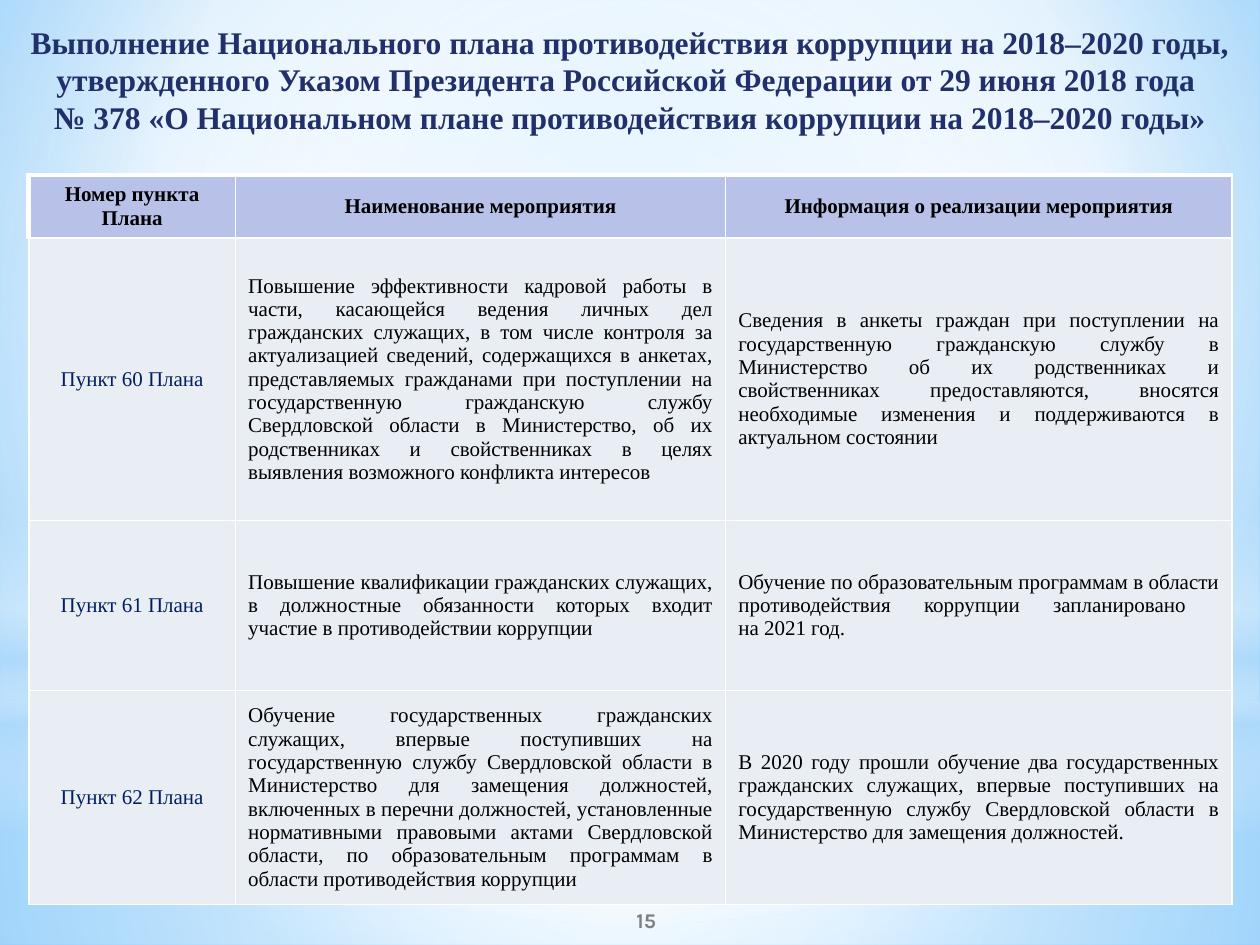
from dataclasses import dataclass

from lxml.etree import SubElement
from pptx import Presentation
from pptx.dml.color import RGBColor
from pptx.enum.shapes import MSO_SHAPE as Shape
from pptx.enum.text import MSO_ANCHOR as Anchor, PP_ALIGN as Align
from pptx.oxml.ns import qn
from pptx.util import Cm, Pt


@dataclass(frozen=True)
class Theme:
    serif: str = "Times New Roman"
    sans: str = "Karla"
    title: str = "21306A"
    body: str = "000000"
    clause: str = "002060"
    number: str = "808080"
    white: str = "FFFFFF"
    haze: str = "B4DCFA"
    sky: str = "9ED5FF"
    deep_sky: str = "5BB9FF"
    header_fill: str = "B8C2E9"
    row_fill: str = "E9EDF4"
    title_size: int = 18
    body_size: int = 12
    border: int = 1
    thick_border: int = 3


THEME = Theme()
WIDTH, HEIGHT = 25.4, 19.05
CENTER = (50, 50, 50, 50)

TITLE = (
    "Выполнение Национального плана противодействия коррупции на 2018–2020 годы, "
    "утвержденного Указом Президента Российской Федерации от 29 июня 2018 года \n"
    "№ 378 «О Национальном плане противодействия коррупции на 2018–2020 годы»"
)
HEADERS = ["Номер пункта Плана", "Наименование мероприятия",
           "Информация о реализации мероприятия"]
MEASURES = [
    ["Пункт 60 Плана",
     "Повышение эффективности кадровой работы в части, касающейся ведения личных дел "
     "гражданских служащих, в том числе контроля за актуализацией сведений, содержащихся "
     "в анкетах, представляемых гражданами при поступлении на государственную гражданскую "
     "службу Свердловской области в Министерство, об их родственниках и свойственниках "
     "в целях выявления возможного конфликта интересов",
     "Сведения в анкеты граждан при поступлении на государственную гражданскую службу "
     "в Министерство об их родственниках и свойственниках предоставляются, вносятся "
     "необходимые изменения и поддерживаются в актуальном состоянии"],
    ["Пункт 61 Плана",
     "Повышение квалификации гражданских служащих, в должностные обязанности которых "
     "входит участие в противодействии коррупции",
     "Обучение по образовательным программам в области противодействия коррупции "
     "запланировано \nна 2021 год."],
    ["Пункт 62 Плана",
     "Обучение государственных гражданских служащих, впервые поступивших "
     "на государственную службу Свердловской области в Министерство для замещения "
     "должностей, включенных в перечни должностей, установленные нормативными правовыми "
     "актами Свердловской области, по образовательным программам в области "
     "противодействия коррупции",
     "В 2020 году прошли обучение два государственных гражданских служащих, впервые "
     "поступивших на государственную службу Свердловской области в Министерство "
     "для замещения должностей."],
]
COLUMN_WIDTHS = [4.17, 9.88, 10.21]
ROW_HEIGHTS = [1.27, 5.69, 3.43, 4.31]


def write(frame, text, *, font=THEME.serif, size=THEME.body_size, color=THEME.body,
          bold=False, align=Align.CENTER):
    frame.word_wrap = True
    paragraph = frame.paragraphs[0]
    paragraph.alignment = align
    for index, line in enumerate(text.split("\n")):
        if index:
            paragraph.add_line_break()
        run = paragraph.add_run()
        run.text = line
        run.font.name, run.font.size, run.font.bold = font, Pt(size), bold
        run.font.color.rgb = RGBColor.from_string(color)
    # A line break carries its own type size
    for line_break in paragraph._p.findall(qn("a:br")):
        SubElement(line_break, qn("a:rPr"), sz=str(size * 100))


def add_text(slide, box, text, anchor=Anchor.TOP, **text_format):
    frame = slide.shapes.add_textbox(*map(Cm, box)).text_frame
    frame.vertical_anchor = anchor
    write(frame, text, **text_format)


def set_gradient(fill, element, stops, focus=None):
    """Stops are (position, colour, opacity); without a focus it runs downwards."""
    fill.gradient()
    gradient = element.find(".//" + qn("a:gradFill"))
    for child in list(gradient):
        gradient.remove(child)
    stop_list = SubElement(gradient, qn("a:gsLst"))
    for position, color, opacity in stops:
        stop = SubElement(stop_list, qn("a:gs"), pos=str(position * 1000))
        tint = SubElement(stop, qn("a:srgbClr"), val=color)
        if opacity < 100:
            SubElement(tint, qn("a:alpha"), val=str(opacity * 1000))
    if focus:
        circle = SubElement(gradient, qn("a:path"), path="circle")
        sides = {side: str(share * 1000) for side, share in zip("ltrb", focus)}
        SubElement(circle, qn("a:fillToRect"), **sides)
    else:
        SubElement(gradient, qn("a:lin"), ang="5400000", scaled="0")


def add_glow(slide, kind, top, height, stops, focus=CENTER):
    glow = slide.shapes.add_shape(kind, 0, Cm(top), Cm(WIDTH), Cm(height))
    glow.shadow.inherit = False
    glow.line.fill.background()
    set_gradient(glow.fill, glow._element, stops, focus)


def add_sky(slide):
    white, haze = THEME.white, THEME.haze
    set_gradient(slide.background.fill, slide._element,
                 [(0, THEME.sky, 100), (60, white, 100), (100, THEME.deep_sky, 100)],
                 (20, 10, 20, 60))
    add_glow(slide, Shape.RECTANGLE, 14.17, 4.88,
             [(0, white, 91), (37, white, 76), (100, haze, 79)])
    add_glow(slide, Shape.RECTANGLE, 0, 14.17,
             [(0, white, 89), (48, white, 62), (100, haze, 79)])
    add_glow(slide, Shape.RECTANGLE, 10.46, 6.35,
             [(0, white, 0), (29, white, 30), (45, haze, 40),
              (55, white, 26), (65, haze, 60), (100, white, 0)], focus=None)
    add_glow(slide, Shape.OVAL, 4.45, 14.17, [(0, white, 100), (56, white, 0)])


def set_borders(cell, **widths):
    properties = cell._tc.get_or_add_tcPr()
    for index, side in enumerate("LRTB"):
        width = widths.get(side, THEME.border)
        line = SubElement(properties, qn(f"a:ln{side}"), w=str(Pt(width)))
        solid = SubElement(line, qn("a:solidFill"))
        SubElement(solid, qn("a:srgbClr"), val=THEME.white)
        properties.insert(index, line)


def add_measures(slide):
    rows = [HEADERS, *MEASURES]
    table = slide.shapes.add_table(
        len(rows), len(HEADERS), Cm(0.58), Cm(3.53),
        Cm(sum(COLUMN_WIDTHS)), Cm(sum(ROW_HEIGHTS))).table
    for column, width in zip(table.columns, COLUMN_WIDTHS):
        column.width = Cm(width)
    for row, height in zip(table.rows, ROW_HEIGHTS):
        row.height = Cm(height)

    for r, texts in enumerate(rows):
        for c, text in enumerate(texts):
            cell, is_header = table.cell(r, c), r == 0
            cell.vertical_anchor = Anchor.MIDDLE
            cell.fill.solid()
            cell.fill.fore_color.rgb = RGBColor.from_string(
                THEME.header_fill if is_header else THEME.row_fill)
            thick = {"T": THEME.thick_border} if is_header else {}
            if is_header and c == 0:
                thick["L"] = THEME.thick_border
            set_borders(cell, **thick)
            write(cell.text_frame, text, bold=is_header,
                  color=THEME.clause if c == 0 and not is_header else THEME.body,
                  align=Align.CENTER if is_header or c == 0 else Align.JUSTIFY)


def main():
    deck = Presentation()
    deck.slide_width, deck.slide_height = Cm(WIDTH), Cm(HEIGHT)
    slide = deck.slides.add_slide(deck.slide_layouts[6])

    # Background
    add_sky(slide)
    # Table of measures
    add_measures(slide)
    # Title and page number
    add_text(slide, (0.3, 0.33, 24.8, 2.57), TITLE,
             size=THEME.title_size, color=THEME.title, bold=True)
    add_text(slide, (10.49, 18.03, 5.08, 1.02), "15", anchor=Anchor.MIDDLE,
             font=THEME.sans, color=THEME.number, bold=True)

    deck.save("out.pptx")


if __name__ == "__main__":
    main()
